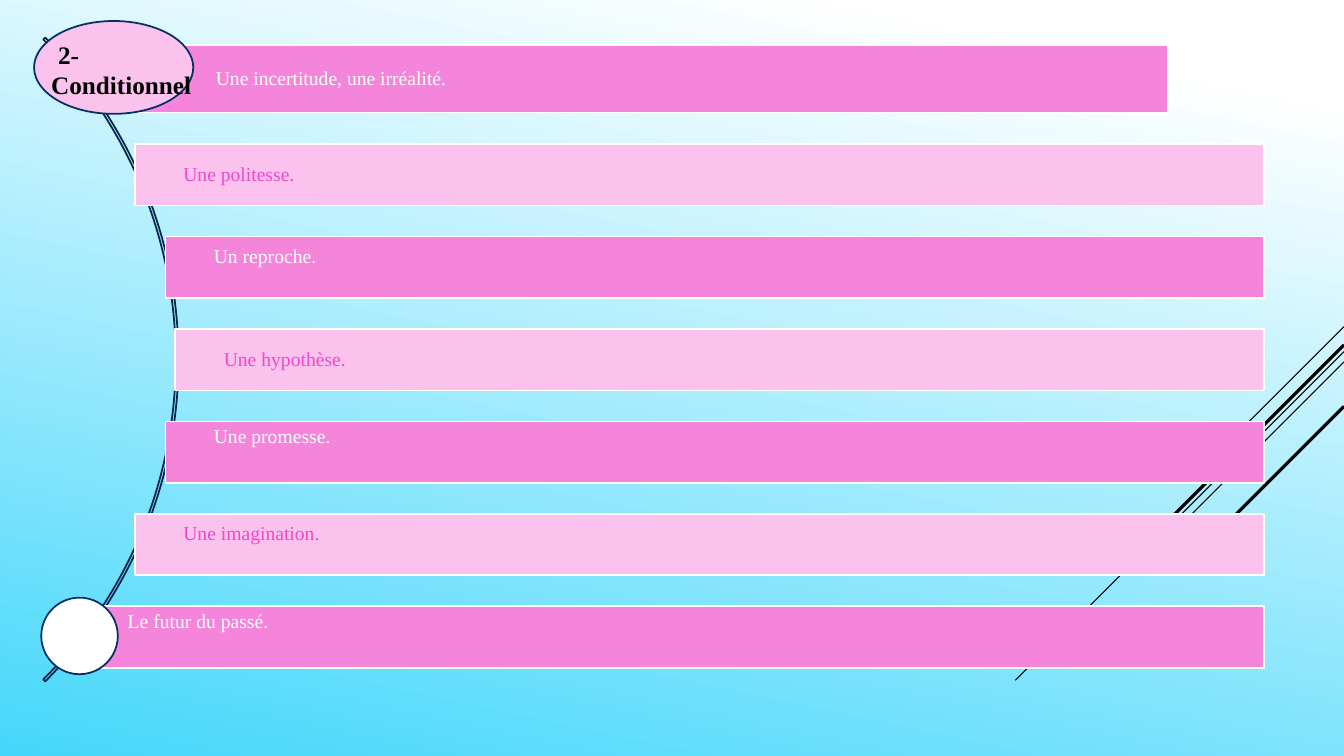
"""Build the slide listing the uses of the conditional."""
from dataclasses import dataclass

import lxml.etree
import pptx
import pptx.dml.color
import pptx.enum.shapes
import pptx.enum.text
import pptx.oxml.ns
import pptx.util

Cm = pptx.util.Cm
Pt = pptx.util.Pt
Kind = pptx.enum.shapes.MSO_SHAPE
Anchor = pptx.enum.text.MSO_ANCHOR
Align = pptx.enum.text.PP_ALIGN

WIDE, HIGH = 33.87, 19.05
SERIF, SANS = "Times New Roman", "TeX Gyre Adventor"
WHITE, PINK, PALE, NAVY = "FFFFFF", "F585DB", "FAC2ED", "052F61"
FIRST, STEP, TALL, RIGHT = 3.63, 2.33, 1.55, 31.86


@dataclass
class Stripe:
    """A diagonal line from the right edge, falling at 45 degrees."""
    top: float
    run: float
    weight: float


@dataclass
class Bar:
    """A pink bar with its sentence."""
    text: str
    left: float
    top: float
    right: float = RIGHT
    tall: float = TALL
    fill: str = PINK
    ink: str = WHITE
    indent: float = 1.22
    base: float = 0.1


STRIPES = [
    Stripe(8.23, 2.54, 0.75),
    Stripe(8.86, 8.28, 0.75),
    Stripe(9.12, 5.26, 0.75),
    Stripe(8.69, 4.85, 2.25),
    Stripe(10.24, 3.53, 2.25),
]

ROWS = [
    ("Une politesse.", 3.4, 0.1),
    ("Un reproche.", 4.17, 0.63),
    ("Une hypothèse.", 4.42, 0.1),
    ("Une promesse.", 4.17, 0.86),
    ("Une imagination.", 3.4, 0.63),
    ("Le futur du passé.", 2.0, 0.86),
]


def tint(code: str) -> pptx.dml.color.RGBColor:
    """Turn a hex string into a colour."""
    return pptx.dml.color.RGBColor.from_string(code)


def apply(target, values: dict) -> None:
    """Set each named value on the target."""
    for name, value in values.items():
        setattr(target, name, value)


def paint(slide) -> None:
    """Fill the background with a gradient."""
    fill = slide.background.fill
    fill.gradient()
    fill.gradient_angle = 258
    for stop, (place, code) in zip(fill.gradient_stops, [(0.1, WHITE), (1, "45D7FB")]):
        stop.position = place
        stop.color.rgb = tint(code)


def draw_stripe(slide, stripe: Stripe) -> None:
    """Draw one diagonal line."""
    line = slide.shapes.add_connector(
        pptx.enum.shapes.MSO_CONNECTOR.STRAIGHT,
        Cm(WIDE), Cm(stripe.top), Cm(WIDE - stripe.run), Cm(stripe.top + stripe.run))
    line.line.color.rgb = tint("000000")
    line.line.width = Pt(stripe.weight)
    lxml.etree.SubElement(line._element.spPr, pptx.oxml.ns.qn("a:effectLst"))


def draw_shape(slide, kind, box: tuple, fill: str, edge: str):
    """Draw a flat shape; an empty fill string leaves it hollow."""
    shape = slide.shapes.add_shape(kind, *map(Cm, box))
    shape.shadow.inherit = False
    if fill:
        shape.fill.solid()
        shape.fill.fore_color.rgb = tint(fill)
    else:
        shape.fill.background()
    shape.line.color.rgb = tint(edge)
    shape.line.width = Pt(1.25)
    return shape


def write(para, text: str, font: dict, ink: str) -> None:
    """Add one run of text."""
    run = para.add_run()
    run.text = text
    apply(run.font, font)
    run.font.color.rgb = tint(ink)


def draw_bar(slide, bar: Bar) -> None:
    """Draw one bar and its sentence."""
    box = (bar.left, bar.top, bar.right - bar.left, bar.tall)
    shape = draw_shape(slide, Kind.RECTANGLE, box, bar.fill, WHITE)
    apply(shape.text_frame, {
        "word_wrap": True, "vertical_anchor": Anchor.MIDDLE,
        "margin_left": Cm(bar.indent), "margin_right": Cm(0.1),
        "margin_top": Cm(0.1), "margin_bottom": Cm(bar.base)})
    para = shape.text_frame.paragraphs[0]
    apply(para, {"alignment": Align.LEFT, "line_spacing": 0.9})
    write(para, bar.text, {"name": SERIF, "size": Pt(14)}, bar.ink)


def draw_title(slide) -> None:
    """Write the title over the oval."""
    frame = slide.shapes.add_textbox(Cm(1.04), Cm(0.86), Cm(4.5), Cm(1.8)).text_frame
    frame.word_wrap = True
    para = frame.paragraphs[0]
    write(para, " ", {"name": SANS, "size": Pt(18)}, "000000")
    write(para, "2-Conditionnel", {"name": SERIF, "size": Pt(18), "bold": True}, "000000")


def main() -> None:
    """Build and save the slide."""
    deck = pptx.Presentation()
    apply(deck, {"slide_width": Cm(WIDE), "slide_height": Cm(HIGH)})
    slide = deck.slides.add_slide(deck.slide_layouts[6])
    paint(slide)
    for stripe in STRIPES:
        draw_stripe(slide, stripe)

    arc = draw_shape(slide, Kind.BLOCK_ARC, (-18.44, -2.41, 22.94, 22.94), "", "04264E")
    for index, value in enumerate((189, 27, 0.003)):
        arc.adjustments[index] = value

    draw_bar(slide, Bar("Une incertitude, une irréalité.", 2.49, 1.14,
                        right=29.44, tall=1.7, indent=2.95))
    draw_shape(slide, Kind.OVAL, (0.86, 0.53, 4.01, 2.34), PALE, NAVY)
    for index, (text, left, base) in enumerate(ROWS):
        fill, ink = (PINK, WHITE) if index % 2 else (PALE, "EF48C9")
        draw_bar(slide, Bar(text, left, FIRST + index * STEP,
                            fill=fill, ink=ink, base=base))
    draw_shape(slide, Kind.OVAL, (1.04, 15.06, 1.93, 1.93), WHITE, NAVY)
    draw_title(slide)
    deck.save("out.pptx")


if __name__ == "__main__":
    main()
